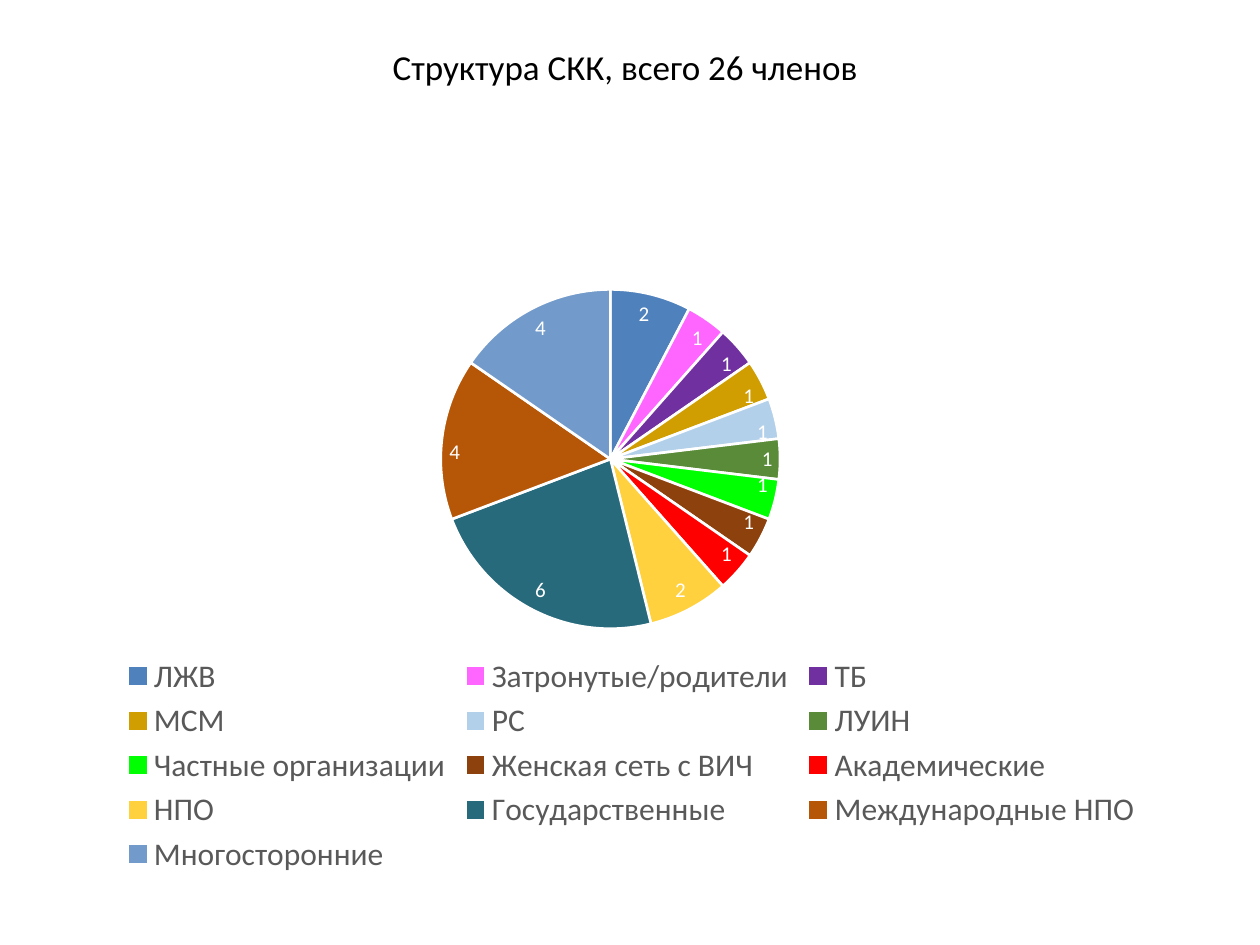
from dataclasses import dataclass

from lxml.etree import SubElement
from pptx import Presentation
from pptx.chart.chart import Chart
from pptx.chart.data import CategoryChartData
from pptx.dml.color import RGBColor
from pptx.enum.chart import XL_CHART_TYPE, XL_LABEL_POSITION, XL_LEGEND_POSITION
from pptx.enum.text import MSO_ANCHOR, PP_ALIGN
from pptx.oxml.ns import qn
from pptx.slide import Slide
from pptx.util import Cm, Pt


@dataclass(frozen=True)
class Theme:
    font: str = "Calibri"
    text: str = "000000"
    legend_text: str = "595959"
    white: str = "FFFFFF"
    title_size: int = 20
    legend_size: int = 18
    label_size: int = 12
    chart_size: int = 10


@dataclass(frozen=True)
class Sector:
    name: str
    members: int
    color: str


THEME = Theme()
TITLE = "Структура СКК, всего 26 членов"
SECTORS = [
    Sector("ЛЖВ", 2, "4F81BD"),
    Sector("Затронутые/родители", 1, "FF66FF"),
    Sector("ТБ", 1, "7030A0"),
    Sector("МСМ", 1, "D09E00"),
    Sector("РС", 1, "B3D0EB"),
    Sector("ЛУИН", 1, "5A8B39"),
    Sector("Частные организации", 1, "00FF00"),
    Sector("Женская сеть с ВИЧ", 1, "8D410D"),
    Sector("Академические", 1, "FF0000"),
    Sector("НПО", 2, "FFD13F"),
    Sector("Государственные", 6, "276A7C"),
    Sector("Международные НПО", 4, "B65708"),
    Sector("Многосторонние", 4, "729ACA"),
]
PLOT_LAYOUT = {"x": 0.335, "y": 0.153, "w": 0.294, "h": 0.565}


def style_font(font, size: int, color: str) -> None:
    font.name = THEME.font
    font.size = Pt(size)
    font.color.rgb = RGBColor.from_string(color)


def add_title(slide: Slide) -> None:
    box = slide.shapes.add_textbox(Cm(0.3), Cm(0.76), Cm(24.61), Cm(1.17))
    frame = box.text_frame
    frame.word_wrap = True
    frame.vertical_anchor = MSO_ANCHOR.MIDDLE
    paragraph = frame.paragraphs[0]
    paragraph.alignment = PP_ALIGN.CENTER
    run = paragraph.add_run()
    run.text = TITLE
    style_font(run.font, THEME.title_size, THEME.text)


def place_plot(chart: Chart) -> None:
    """Fix the inner plot area at fractions of the chart frame."""
    plot_area = chart.element.find(".//" + qn("c:plotArea"))
    for automatic_layout in plot_area.findall(qn("c:layout")):
        plot_area.remove(automatic_layout)
    layout = plot_area.makeelement(qn("c:layout"))
    plot_area.insert(0, layout)
    manual = SubElement(layout, qn("c:manualLayout"))
    settings = {"layoutTarget": "inner", "xMode": "edge", "yMode": "edge", **PLOT_LAYOUT}
    for tag, value in settings.items():
        SubElement(manual, qn(f"c:{tag}")).set("val", str(value))


def add_members_chart(slide: Slide) -> None:
    data = CategoryChartData()
    data.categories = [sector.name for sector in SECTORS]
    data.add_series("Series 1", [sector.members for sector in SECTORS])
    chart = slide.shapes.add_chart(
        XL_CHART_TYPE.PIE, Cm(1.09), Cm(2.72), Cm(23.27), Cm(15.01), data
    ).chart
    chart.has_title = False
    style_font(chart.font, THEME.chart_size, THEME.text)
    place_plot(chart)

    chart.has_legend = True
    chart.legend.position = XL_LEGEND_POSITION.BOTTOM
    chart.legend.include_in_layout = False
    style_font(chart.legend.font, THEME.legend_size, THEME.legend_text)

    plot = chart.plots[0]
    plot.vary_by_categories = True
    series = plot.series[0]
    for index, sector in enumerate(SECTORS):
        point_format = series.points[index].format
        point_format.fill.solid()
        point_format.fill.fore_color.rgb = RGBColor.from_string(sector.color)
        point_format.line.color.rgb = RGBColor.from_string(THEME.white)
        point_format.line.width = Pt(1.5)

    labels = series.data_labels
    labels.show_value = True
    labels.position = XL_LABEL_POSITION.INSIDE_END
    style_font(labels.font, THEME.label_size, THEME.white)


def main() -> None:
    presentation = Presentation()
    presentation.slide_width = Cm(25.4)
    presentation.slide_height = Cm(19.05)
    slide = presentation.slides.add_slide(presentation.slide_layouts[6])
    add_title(slide)
    add_members_chart(slide)
    presentation.save("out.pptx")


if __name__ == "__main__":
    main()
